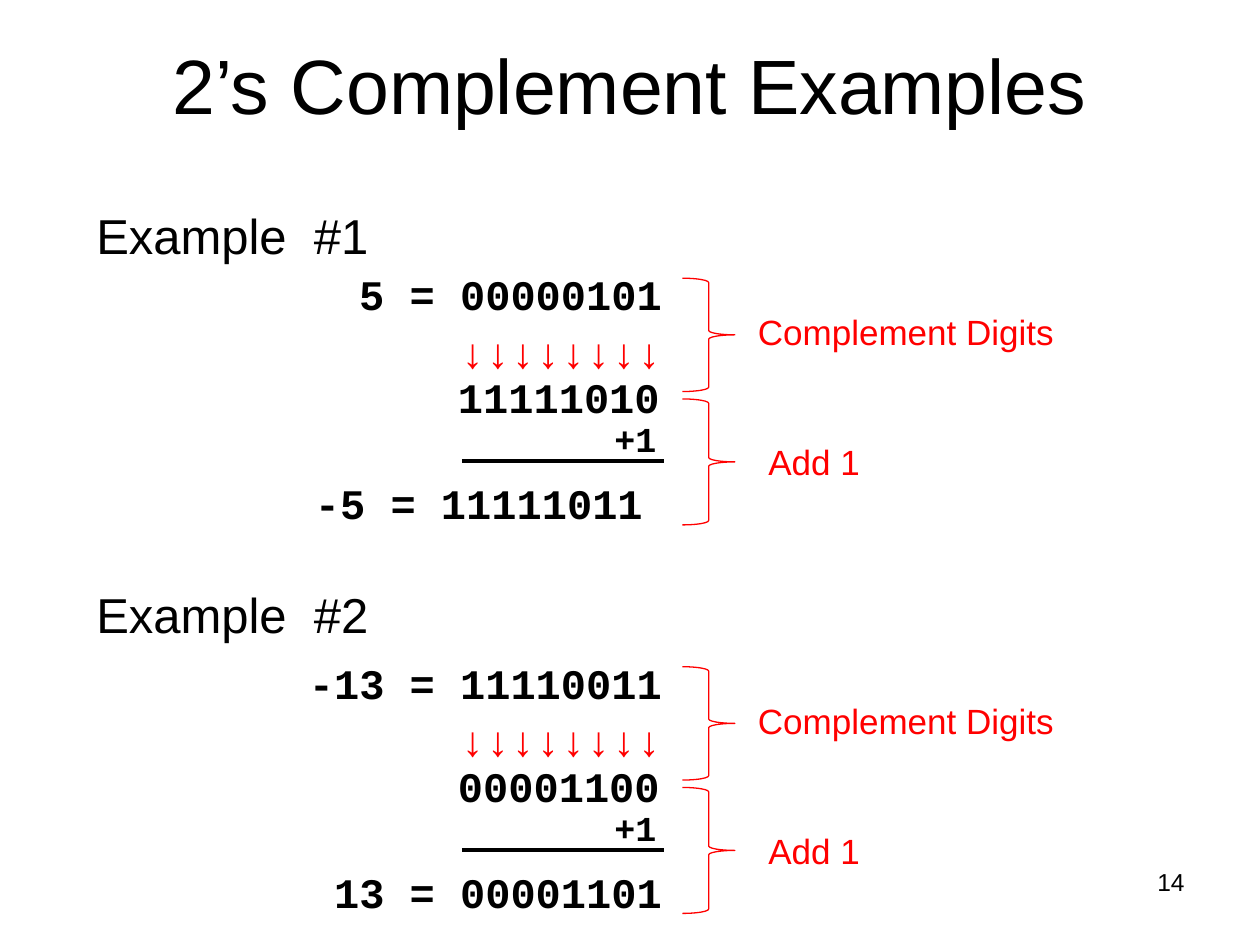
from lxml import etree
from pptx import Presentation
from pptx.dml.color import RGBColor
from pptx.enum.shapes import MSO_CONNECTOR, MSO_SHAPE
from pptx.enum.text import MSO_ANCHOR, PP_ALIGN
from pptx.oxml.ns import qn
from pptx.util import Inches, Pt

LEFT, CENTER, RIGHT = PP_ALIGN.LEFT, PP_ALIGN.CENTER, PP_ALIGN.RIGHT
MIDDLE, TOP = MSO_ANCHOR.MIDDLE, MSO_ANCHOR.TOP
BRACE, STRAIGHT = MSO_SHAPE.RIGHT_BRACE, MSO_CONNECTOR.STRAIGHT
BLACK, RED = "000000", "FF0000"
SANS, MONO = "Arial", "Courier New"
COLS, ROWS = 120, 90
CELL = Inches(10) / COLS
EXAMPLE_STEP = 37


def grid(*cells):
    return [round(n * CELL) for n in cells]


def color(value):
    return RGBColor.from_string(value)


def add_text(s, text, at, size, align=LEFT, font=SANS, fill=BLACK,
             anchor=TOP, wrap=True):
    tf = s.shapes.add_textbox(*grid(*at)).text_frame
    tf.text = text
    tf.word_wrap = wrap
    tf.vertical_anchor = anchor
    p = tf.paragraphs[0]
    p.alignment = align
    f = p.runs[0].font
    f.name, f.size, f.bold = font, Pt(size), font == MONO
    f.color.rgb = color(fill)
    return tf


def add_binary(s, text, row, left=22.2, fill=BLACK):
    return add_text(s, text, (left, row, 42, 6), 24, RIGHT, MONO, fill)


def add_brace(s, row, height):
    sp = s.shapes.add_shape(BRACE, *grid(65, row, 5, height))
    sp.shadow.inherit = False
    sp.fill.background()
    sp.line.color.rgb = color(RED)
    sp.line.width = Pt(0.75)


def add_sum_line(s, row):
    line = s.shapes.add_connector(STRAIGHT, *grid(44, row, 63.2, row))
    line.line.color.rgb = color(BLACK)
    line.line.width = Pt(2.25)
    etree.SubElement(line._element.spPr, qn("a:effectLst"))


def add_example(s, top, start, complement, result):
    add_text(s, "Complement Digits", (71, top + 4, 35, 5.25), 20, fill=RED)
    add_brace(s, top + 1.5, 10.8)
    add_text(s, "Add 1", (72, top + 16.4, 30, 5.25), 20, fill=RED)
    add_brace(s, top + 13, 12)
    add_binary(s, start, top)
    add_binary(s, "↓" * 8, top + 5.5, fill=RED)
    add_binary(s, complement, top + 9.8, left=22)
    add_sum_line(s, top + 18.95)
    add_text(s, "+1", (57.2, top + 14.2, 6.5, 5.25), 20, RIGHT, MONO, wrap=False)
    return add_binary(s, result, top + 19.9)


def main():
    prs = Presentation()
    prs.slide_width, prs.slide_height = grid(COLS, ROWS)
    s = prs.slides.add_slide(prs.slide_layouts[6])
    add_text(s, "2’s Complement Examples", (0, 0, COLS, 16), 44, CENTER,
             anchor=MIDDLE)
    add_text(s, "14", (86, 82, 28, 6.25), 14, RIGHT)
    examples = [("5 = 00000101", "11111010", "-5 = 11111011"),
                ("-13 = 11110011", "00001100", "13 = 00001101")]
    results = []
    for i, values in enumerate(examples):
        add_text(s, f"Example  #{i + 1}", (8, 19 + 36.1 * i, 31, 6.85), 28)
        results.append(add_example(s, 25 + EXAMPLE_STEP * i, *values))
    results[0].margin_right = Inches(0.25)
    prs.save("out.pptx")


if __name__ == "__main__":
    main()
